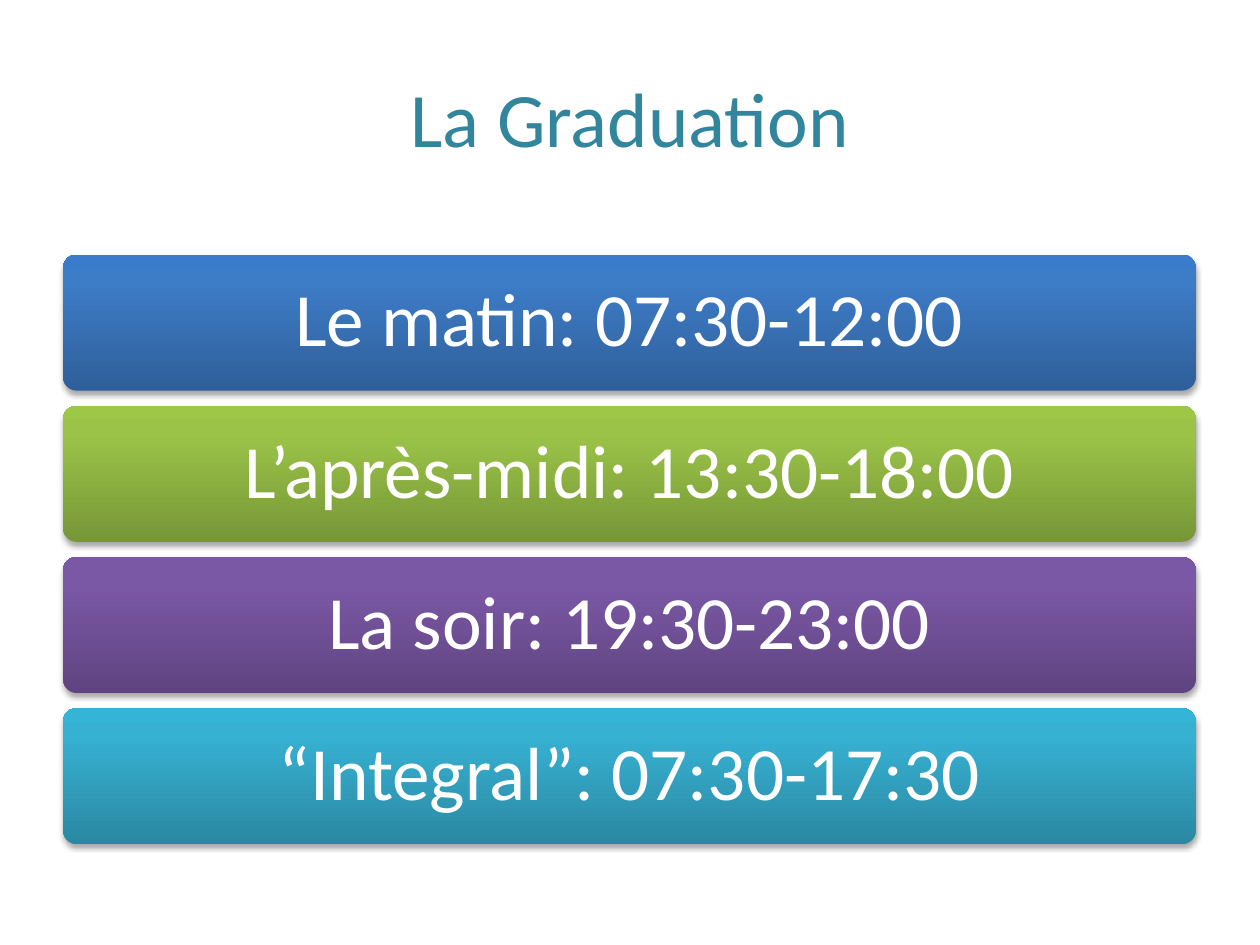
from dataclasses import dataclass

import pptx
import pptx.dml.color
import pptx.enum.shapes
import pptx.enum.text
import pptx.oxml
import pptx.util
from pptx.util import Inches

FONT = "Calibri"
COLORS = {"title": "31859C", "bar text": "FFFFFF", "shadow": "000000"}
GRADIENTS = {  # bottom, 80 % of the way up, top
    "blue": ("2F5F99", "3D7CC7", "3A7CCB"),
    "green": ("779737", "9BC348", "9DC746"),
    "purple": ("5F4480", "7B58A6", "7C57A8"),
    "teal": ("2A88A2", "37B1D2", "34B4D6"),
}
STOPS = (0, 80, 100)
NAMESPACE = 'xmlns:a="http://schemas.openxmlformats.org/drawingml/2006/main"'

BAR_LEFT, BAR_TOP, BAR_WIDTH, BAR_HEIGHT = 0.5, 2.02, 8.99, 1.08
BAR_PITCH = 1.2
TEXT_INSET = 0.03


@dataclass
class Session:
    label: str
    gradient: str


SESSIONS = [
    Session("Le matin: 07:30-12:00", "blue"),
    Session("L’après-midi: 13:30-18:00", "green"),
    Session("La soir: 19:30-23:00", "purple"),
    Session("“Integral”: 07:30-17:30", "teal"),
]


def add_text(slide, text: str, left: float, top: float, width: float, height: float,
             *, size: float, color: str, margin: float | None = None,
             line_spacing: float | None = None) -> None:
    """Add a wrapped text box, centred both ways."""
    box = slide.shapes.add_textbox(Inches(left), Inches(top), Inches(width), Inches(height))
    frame = box.text_frame
    frame.word_wrap = True
    frame.vertical_anchor = pptx.enum.text.MSO_ANCHOR.MIDDLE
    if margin is not None:
        frame.margin_left = frame.margin_right = Inches(margin)
        frame.margin_top = frame.margin_bottom = Inches(margin)
    para = frame.paragraphs[0]
    para.alignment = pptx.enum.text.PP_ALIGN.CENTER
    para.line_spacing = line_spacing
    span = para.add_run()
    span.text = text
    span.font.name = FONT
    span.font.size = pptx.util.Pt(size)
    span.font.color.rgb = pptx.dml.color.RGBColor.from_string(color)


def style_bar(bar, colors: tuple[str, str, str]) -> None:
    """Give a bar its three-stop gradient, no outline and a soft shadow below."""
    stops = "".join(
        f'<a:gs pos="{stop * 1000}"><a:srgbClr val="{color}"/></a:gs>'
        for stop, color in zip(STOPS, colors)
    )
    gradient = (f'<a:gradFill {NAMESPACE} rotWithShape="1"><a:gsLst>{stops}</a:gsLst>'
                '<a:lin ang="16200000" scaled="0"/></a:gradFill>')
    outline = f"<a:ln {NAMESPACE}><a:noFill/></a:ln>"
    blur, distance = pptx.util.Pt(3.1), pptx.util.Pt(1.8)
    shadow = (f'<a:effectLst {NAMESPACE}><a:outerShdw blurRad="{blur}" dist="{distance}" '
              f'dir="5400000" rotWithShape="0"><a:srgbClr val="{COLORS["shadow"]}">'
              '<a:alpha val="35000"/></a:srgbClr></a:outerShdw></a:effectLst>')
    for part in (gradient, outline, shadow):
        bar._element.spPr.append(pptx.oxml.parse_xml(part))


def add_session(slide, session: Session, top: float) -> None:
    """Draw one rounded bar with its label."""
    bar = slide.shapes.add_shape(
        pptx.enum.shapes.MSO_SHAPE.ROUNDED_RECTANGLE,
        Inches(BAR_LEFT), Inches(top), Inches(BAR_WIDTH), Inches(BAR_HEIGHT))
    bar.adjustments[0] = 0.1
    style_bar(bar, GRADIENTS[session.gradient])
    add_text(slide, session.label, BAR_LEFT + TEXT_INSET, top + TEXT_INSET,
             BAR_WIDTH - 2 * TEXT_INSET, BAR_HEIGHT - 2 * TEXT_INSET,
             size=43, color=COLORS["bar text"], margin=0.18, line_spacing=0.9)


def main() -> None:
    deck = pptx.Presentation()
    deck.slide_width, deck.slide_height = Inches(10), Inches(7.5)
    page = deck.slides.add_slide(deck.slide_layouts[6])

    # Title
    add_text(page, "La Graduation", 0.5, 0.3, 9, 1.25, size=44, color=COLORS["title"])

    # Timetable bars
    for row, session in enumerate(SESSIONS):
        add_session(page, session, BAR_TOP + row * BAR_PITCH)

    deck.save("out.pptx")


if __name__ == "__main__":
    main()
